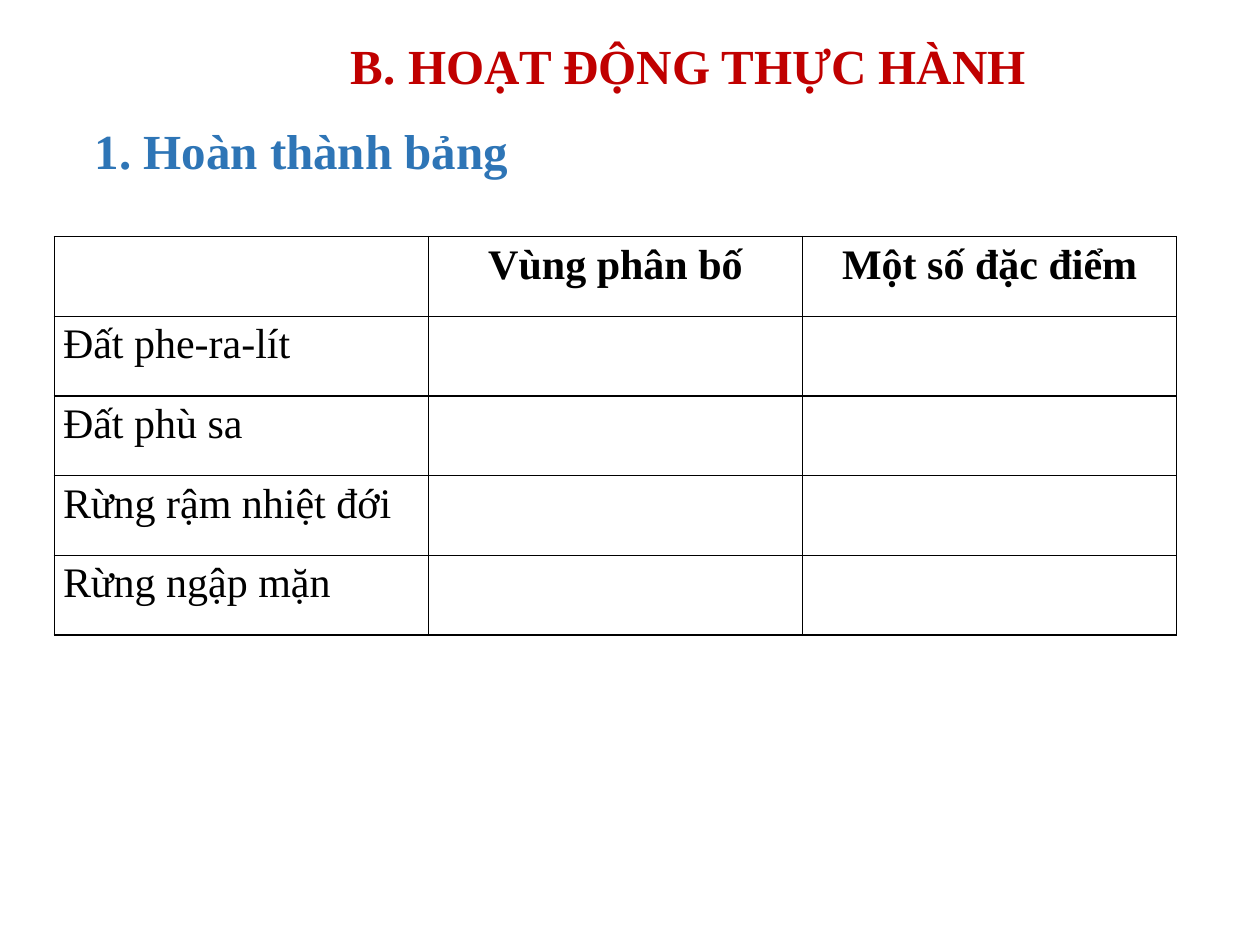
from lxml import etree
from pptx import Presentation
from pptx.dml.color import RGBColor
from pptx.enum.text import MSO_AUTO_SIZE, PP_ALIGN
from pptx.oxml.ns import qn
from pptx.util import Pt

LEFT, MID = PP_ALIGN.LEFT, PP_ALIGN.CENTER
GROW = MSO_AUTO_SIZE.SHAPE_TO_FIT_TEXT
THEME = {
    "font": "Times New Roman",
    "red": "C00000",
    "blue": "2E75B6",
    "black": "000000",
    "head": 28,
    "body": 24,
}


def write(frame, text, size, color, bold, align=LEFT):
    para = frame.paragraphs[0]
    para.alignment = align
    run = para.add_run()
    run.text = text
    form = {"name": THEME["font"], "size": Pt(THEME[size]), "bold": bold}
    for key, val in form.items():
        setattr(run.font, key, val)
    run.font.color.rgb = RGBColor.from_string(THEME[color])


def edge(cell):
    props = cell._tc.get_or_add_tcPr()
    for side in ("lnL", "lnR", "lnT", "lnB"):
        line = etree.SubElement(props, qn(f"a:{side}"), w=str(Pt(1)))
        fill = etree.SubElement(line, qn("a:solidFill"))
        etree.SubElement(fill, qn("a:srgbClr"), val=THEME["black"])


deck = Presentation()
deck.slide_width, deck.slide_height = Pt(720), Pt(540)
slide = deck.slides.add_slide(deck.slide_layouts[6])

heads = [
    ("B. HOẠT ĐỘNG THỰC HÀNH", "red", 193.5, 16.5, 404),
    ("1. Hoàn thành bảng", "blue", 47, 65.5, 253.5),
]
for text, color, left, top, width in heads:
    box = slide.shapes.add_textbox(Pt(left), Pt(top), Pt(width), Pt(41))
    frame = box.text_frame
    for key, val in {"word_wrap": False, "auto_size": GROW}.items():
        setattr(frame, key, val)
    write(frame, text, "head", color, True)

rows = [
    ("", "Vùng phân bố", "Một số đặc điểm"),
    ("Đất phe-ra-lít", "", ""),
    ("Đất phù sa", "", ""),
    ("Rừng rậm nhiệt đới", "", ""),
    ("Rừng ngập mặn", "", ""),
]
wide, high = 213.8, 45.55
grid = slide.shapes.add_table(
    len(rows), 3, Pt(31), Pt(135.2), Pt(3 * wide), Pt(len(rows) * high)
).table
for key in ("first_row", "horz_banding"):
    setattr(grid, key, False)
for col in grid.columns:
    col.width = Pt(wide)

inset = {
    "margin_left": Pt(5),
    "margin_right": Pt(5),
    "margin_top": Pt(3),
    "margin_bottom": Pt(3),
}
for r, row in enumerate(rows):
    grid.rows[r].height = Pt(high)
    for c, text in enumerate(row):
        cell = grid.cell(r, c)
        for key, val in inset.items():
            setattr(cell, key, val)
        edge(cell)
        cell.fill.background()
        if text:
            top = r == 0
            write(cell.text_frame, text, "body", "black", top, MID if top else LEFT)

deck.save("out.pptx")
